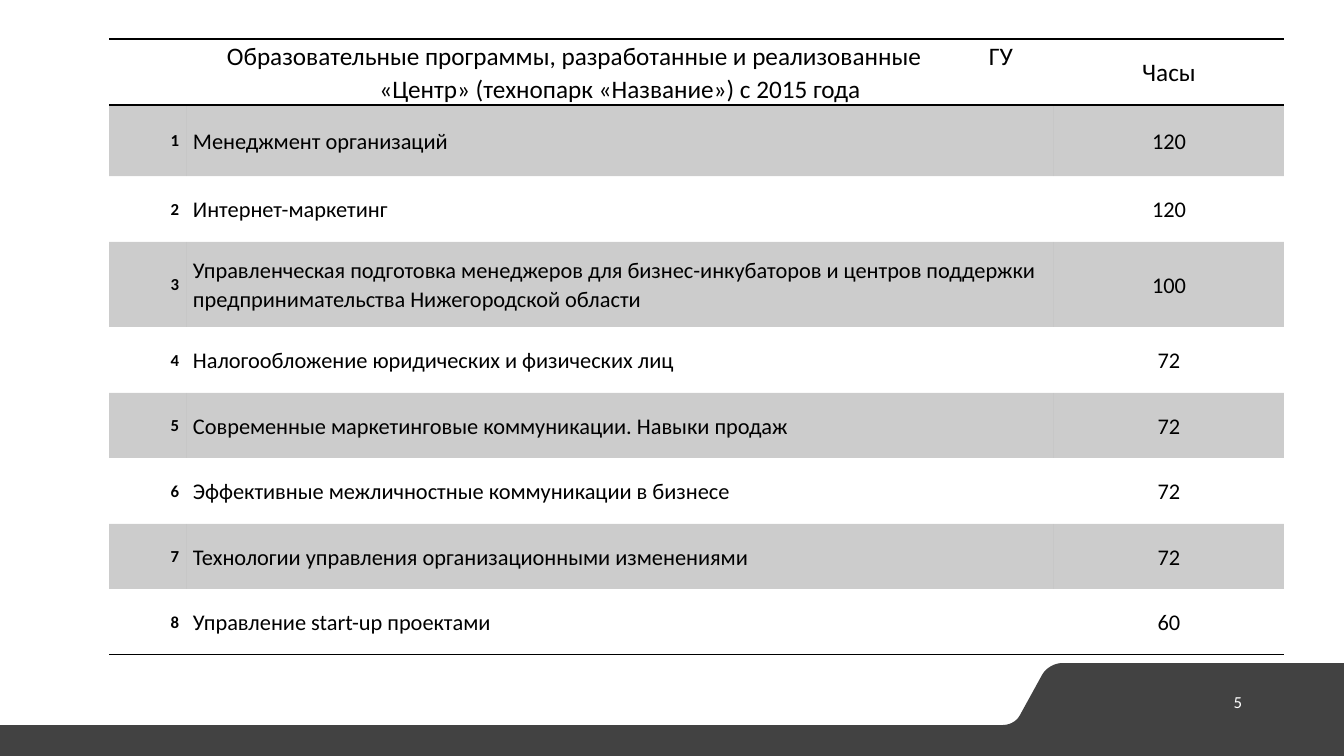
from pptx import Presentation, util as u
from pptx.dml.color import RGBColor
from pptx.enum import text
from pptx.oxml import parse_xml
from pptx.oxml.ns import nsdecls, qn

PX = 914400 / 100.8
FONT = "Calibri"
BLACK, WHITE, DARK = "000000", "FFFFFF", "424242"
LEFT, CENTER, RIGHT = text.PP_ALIGN.LEFT, text.PP_ALIGN.CENTER, text.PP_ALIGN.RIGHT
NO_STYLE = "{2D5ABB26-0587-4C30-8999-92F81FD0307C}"

TITLE = ("Образовательные программы, разработанные и реализованные\tГУ "
         "«Центр» (технопарк «Название») с 2015 года")
TITLE_TAB = 762
PROGRAMS = [
    ("Менеджмент организаций", 120),
    ("Интернет-маркетинг", 120),
    ("Управленческая подготовка менеджеров для бизнес-инкубаторов и центров "
     "поддержки предпринимательства Нижегородской области", 100),
    ("Налогообложение юридических и физических лиц", 72),
    ("Современные маркетинговые коммуникации. Навыки продаж", 72),
    ("Эффективные межличностные коммуникации в бизнесе", 72),
    ("Технологии управления организационными изменениями", 72),
    ("Управление start-up проектами", 60),
]
COLUMNS = [77, 868, 230]
ROWS = [66, 71, 66, 85, 66, 65, 66, 65, 66]


def px(n):
    return u.Emu(round(n * PX))


def color(value):
    return RGBColor.from_string(value)


def style(p, size, align, ink=BLACK, bold=False):
    p.alignment = align
    p.font.name, p.font.size, p.font.bold = FONT, u.Pt(size), bold
    p.font.color.rgb = color(ink)


def curve(a, b, c, d, steps=12):
    """Points along a cubic Bezier from a to d."""
    points = []
    for i in range(steps + 1):
        t = i / steps
        weights = ((1 - t) ** 3, 3 * t * (1 - t) ** 2, 3 * t * t * (1 - t), t ** 3)
        points.append(tuple(sum(w * q[k] for w, q in zip(weights, (a, b, c, d)))
                            for k in (0, 1)))
    return points


def add_footer(s):
    outline = (curve((1063, 663), (1054, 663), (1046, 668), (1042, 675))
               + curve((1020, 715), (1017, 721), (1010, 725), (1003, 725))
               + [(0, 725), (0, 756), (1344, 756), (1344, 663)])
    points = [(px(x), px(y)) for x, y in outline]
    builder = s.shapes.build_freeform(*points[0])
    builder.add_line_segments(points[1:], close=True)
    sp = builder.convert_to_shape()
    sp.shadow.inherit = False
    sp.fill.solid()
    sp.fill.fore_color.rgb = color(DARK)
    sp.line.fill.background()


def add_page_number(s, number):
    tf = s.shapes.add_textbox(px(950), px(682), px(302), px(40)).text_frame
    tf.word_wrap = True
    tf.vertical_anchor = text.MSO_ANCHOR.MIDDLE
    p = tf.paragraphs[0]
    p.text = number
    style(p, 12, RIGHT, WHITE)


def add_tab(p, position):
    p._p.get_or_add_pPr().append(parse_xml(
        f'<a:tabLst {nsdecls("a")}><a:tab pos="{px(position)}" algn="l"/></a:tabLst>'))


def add_border(cell, side):
    cell._tc.get_or_add_tcPr().append(parse_xml(
        f'<a:ln{side} {nsdecls("a")} w="12700"><a:solidFill>'
        f'<a:srgbClr val="{BLACK}"/></a:solidFill></a:ln{side}>'))


def fill_cell(cell, shaded):
    if not shaded:
        cell.fill.background()
        return
    cell.fill.solid()
    cell.fill.fore_color.rgb = color(BLACK)
    srgb = cell._tc.tcPr.find(qn("a:solidFill")).find(qn("a:srgbClr"))
    srgb.append(parse_xml(f'<a:alpha {nsdecls("a")} val="20000"/>'))


def set_cell(cell, words, size, align, bold, borders, shaded):
    cell.margin_left = cell.margin_right = px(7)
    cell.margin_top = cell.margin_bottom = 0
    cell.vertical_anchor = text.MSO_ANCHOR.MIDDLE
    for side in borders:
        add_border(cell, side)
    fill_cell(cell, shaded)
    p = cell.text_frame.paragraphs[0]
    p.text = words
    if "\t" in words:
        add_tab(p, TITLE_TAB)
    p.line_spacing = 1.07
    style(p, size, align, bold=bold)


def add_programs(s):
    table = s.shapes.add_table(len(ROWS), len(COLUMNS), px(109), px(39),
                               px(sum(COLUMNS)), px(sum(ROWS))).table
    table.first_row = table.horz_banding = False
    table._tbl.tblPr.find(qn("a:tableStyleId")).text = NO_STYLE
    for column, width in zip(table.columns, COLUMNS):
        column.width = px(width)
    for row, height in zip(table.rows, ROWS):
        row.height = px(height)

    header = [("", 18, CENTER, False), (TITLE, 18, CENTER, False),
              ("Часы", 18, CENTER, False)]
    body = [[(str(n), 12, RIGHT, True), (name, 16, LEFT, False),
             (str(hours), 16, CENTER, False)]
            for n, (name, hours) in enumerate(PROGRAMS, 1)]
    borders = {0: "TB", len(PROGRAMS): "B"}
    for i, line in enumerate([header] + body):
        for j, content in enumerate(line):
            set_cell(table.cell(i, j), *content, borders.get(i, ""), i % 2 == 1)


def main():
    prs = Presentation()
    prs.slide_width, prs.slide_height = px(1344), px(756)
    s = prs.slides.add_slide(prs.slide_layouts[6])
    add_footer(s)
    add_page_number(s, "5")
    add_programs(s)
    prs.save("out.pptx")


if __name__ == "__main__":
    main()
